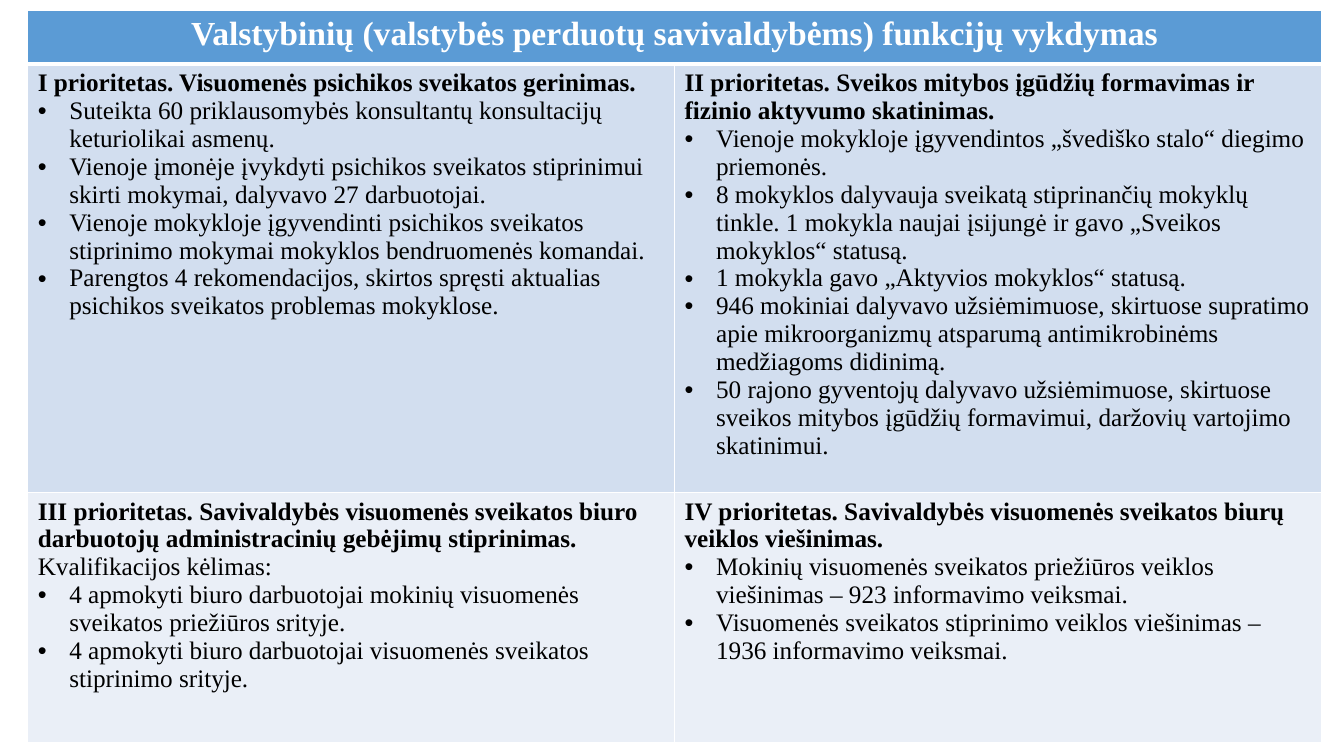
from dataclasses import dataclass

from lxml.etree import SubElement
from pptx import Presentation
from pptx.dml.color import RGBColor
from pptx.enum.text import PP_ALIGN
from pptx.oxml.ns import qn
from pptx.table import _Cell
from pptx.util import Pt

FONT = "Times New Roman"
WHITE, BLACK = "FFFFFF", "000000"
HEADER_BLUE, UPPER_BLUE, LOWER_BLUE = "5B9BD5", "D2DEEF", "EAEFF7"
TITLE = "Valstybinių (valstybės perduotų savivaldybėms) funkcijų vykdymas"


@dataclass
class Priority:
    heading: str
    bullets: list[str]
    lead: str = ""


PRIORITIES = [
    Priority("I prioritetas. Visuomenės psichikos sveikatos gerinimas.", [
        "Suteikta 60 priklausomybės konsultantų konsultacijų keturiolikai asmenų.",
        "Vienoje įmonėje įvykdyti psichikos sveikatos stiprinimui skirti mokymai, "
        "dalyvavo 27 darbuotojai.",
        "Vienoje mokykloje įgyvendinti psichikos sveikatos stiprinimo mokymai "
        "mokyklos bendruomenės komandai.",
        "Parengtos 4 rekomendacijos, skirtos spręsti aktualias psichikos sveikatos "
        "problemas mokyklose.",
    ]),
    Priority("II prioritetas. Sveikos mitybos įgūdžių formavimas ir fizinio "
             "aktyvumo skatinimas.", [
        "Vienoje mokykloje įgyvendintos „švediško stalo“ diegimo priemonės.",
        "8 mokyklos dalyvauja sveikatą stiprinančių mokyklų tinkle. 1 mokykla "
        "naujai įsijungė ir gavo „Sveikos mokyklos“ statusą.",
        "1 mokykla gavo „Aktyvios mokyklos“ statusą.",
        "946 mokiniai dalyvavo užsiėmimuose, skirtuose supratimo apie "
        "mikroorganizmų atsparumą antimikrobinėms medžiagoms didinimą.",
        "50 rajono gyventojų dalyvavo užsiėmimuose, skirtuose sveikos mitybos "
        "įgūdžių formavimui, daržovių vartojimo skatinimui.",
    ]),
    Priority("III prioritetas. Savivaldybės visuomenės sveikatos biuro darbuotojų "
             "administracinių gebėjimų stiprinimas.", [
        "4 apmokyti biuro darbuotojai mokinių visuomenės sveikatos priežiūros srityje.",
        "4 apmokyti biuro darbuotojai visuomenės sveikatos stiprinimo srityje.",
    ], lead="Kvalifikacijos kėlimas:"),
    Priority("IV prioritetas. Savivaldybės visuomenės sveikatos biurų veiklos "
             "viešinimas.", [
        "Mokinių visuomenės sveikatos priežiūros veiklos viešinimas – 923 "
        "informavimo veiksmai.",
        "Visuomenės sveikatos stiprinimo veiklos viešinimas – 1936 informavimo "
        "veiksmai.",
    ]),
]


def rgb(color: str) -> RGBColor:
    return RGBColor.from_string(color)


def style_cell(cell: _Cell, fill: str, top: float, bottom: float) -> None:
    tcPr = cell._tc.get_or_add_tcPr()
    for side, width in {"L": 1, "R": 1, "T": top, "B": bottom}.items():
        ln = SubElement(tcPr, qn(f"a:ln{side}"), w=str(Pt(width)))
        SubElement(SubElement(ln, qn("a:solidFill")), qn("a:srgbClr"), val=WHITE)
    cell.fill.solid()
    cell.fill.fore_color.rgb = rgb(fill)


def write(cell: _Cell, text: str, size: float = 18, color: str = BLACK,
          bold: bool = False, bullet: bool = False,
          align: PP_ALIGN = PP_ALIGN.LEFT) -> None:
    tf = cell.text_frame
    p = tf.add_paragraph() if tf.text else tf.paragraphs[0]
    p.alignment = align
    if bullet:
        pPr = p._p.get_or_add_pPr()
        pPr.set("marL", str(Pt(22.5)))
        pPr.set("indent", str(-Pt(22.5)))
        SubElement(pPr, qn("a:buFont"), typeface="Arial")
        SubElement(pPr, qn("a:buChar"), char="•")
    r = p.add_run()
    r.text = text
    for name, value in {"name": FONT, "size": Pt(size), "bold": bold}.items():
        setattr(r.font, name, value)
    r.font.color.rgb = rgb(color)


def write_priority(cell: _Cell, priority: Priority) -> None:
    write(cell, priority.heading, bold=True)
    if priority.lead:
        write(cell, priority.lead)
    for text in priority.bullets:
        write(cell, text, bullet=True)


def main() -> None:
    prs = Presentation()
    prs.slide_width, prs.slide_height = Pt(960), Pt(540)
    s = prs.slides.add_slide(prs.slide_layouts[6])
    table = s.shapes.add_table(3, 2, Pt(19.8), Pt(7.2), Pt(924), Pt(523)).table
    for row, height in zip(table.rows, (38.6, 306, 178.4)):
        row.height = Pt(height)

    for cell in table.rows[0].cells:
        style_cell(cell, HEADER_BLUE, top=1, bottom=3)
    header = table.cell(0, 0)
    header.merge(table.cell(0, 1))
    write(header, TITLE, size=24, color=WHITE, bold=True, align=PP_ALIGN.CENTER)

    for i, priority in enumerate(PRIORITIES):
        row, col = divmod(i, 2)
        cell = table.cell(row + 1, col)
        style_cell(cell, (UPPER_BLUE, LOWER_BLUE)[row], top=(3, 1)[row], bottom=1)
        write_priority(cell, priority)

    prs.save("out.pptx")


if __name__ == "__main__":
    main()
